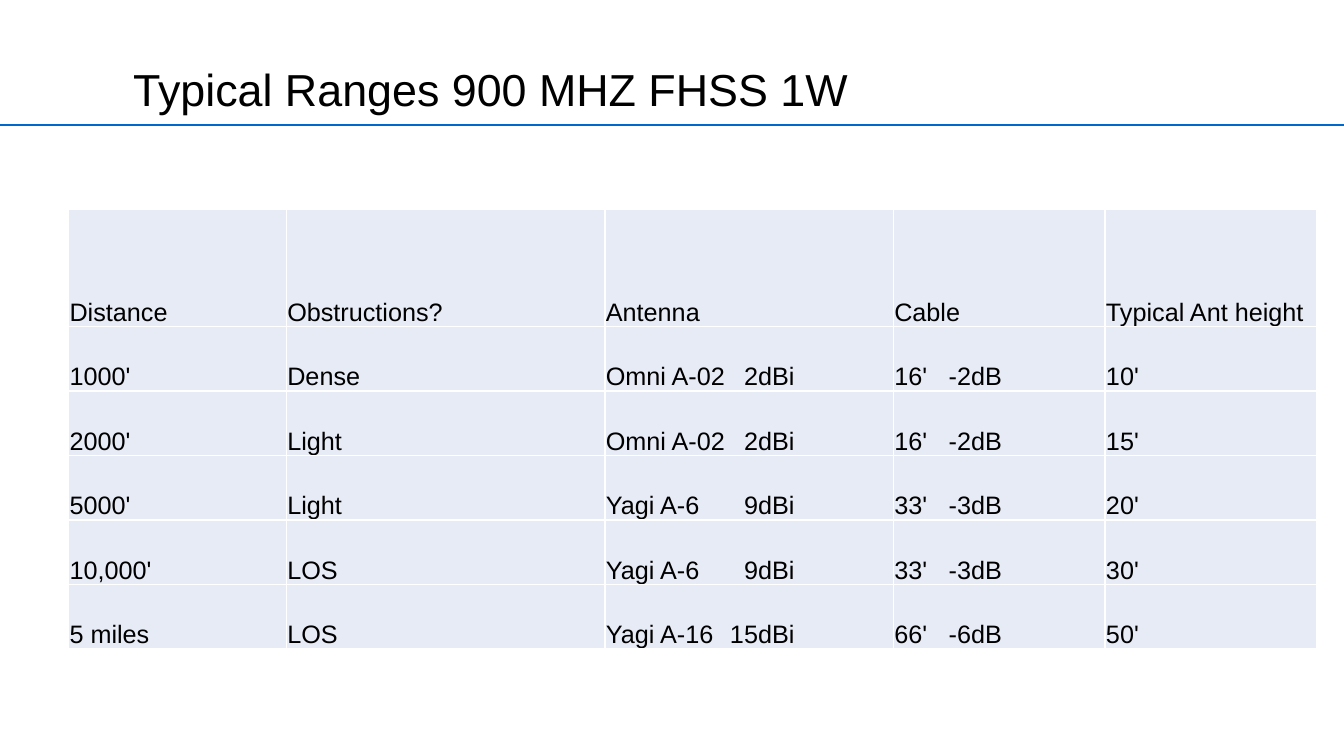
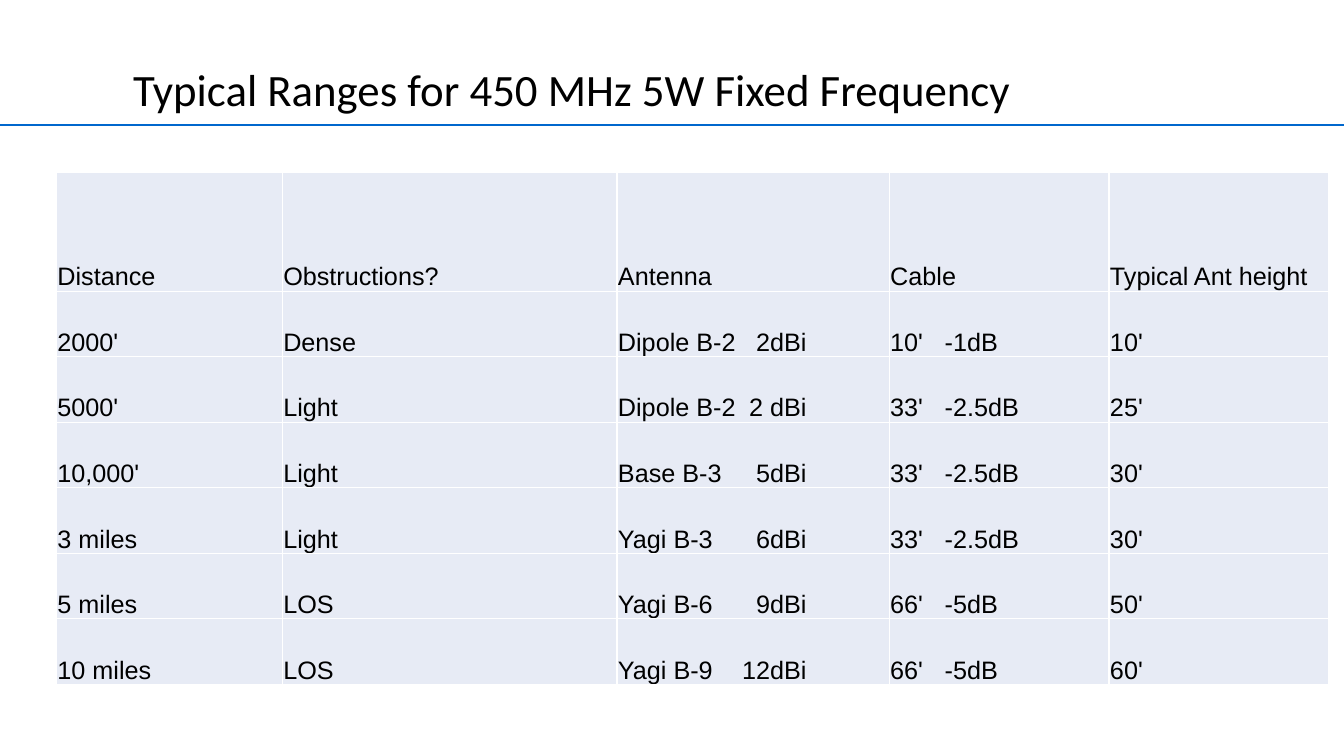
"""Build two slides of typical radio ranges, each with one table."""
from lxml import etree
from pptx import Presentation
from pptx.dml.color import RGBColor
from pptx.enum.shapes import MSO_CONNECTOR
from pptx.enum.text import MSO_ANCHOR, PP_ALIGN
from pptx.oxml.ns import qn
from pptx.util import Inches, Pt

STRAIGHT = MSO_CONNECTOR.STRAIGHT
BOTTOM = MSO_ANCHOR.BOTTOM
LEFT = PP_ALIGN.LEFT
COLORS = {"rule": "0067CD", "text": "000000", "cell": "E7EBF5", "border": "FFFFFF"}
CELL_FORMAT = {
    "margin_left": Inches(0.01), "margin_right": Inches(0.01),
    "margin_top": Inches(0.01), "margin_bottom": 0, "vertical_anchor": BOTTOM,
}
TITLE_PLACE = {
    "left": Inches(1.22), "top": 0, "width": Inches(11.56), "height": Inches(1.2),
}
TAB_STOPS = {2: (1.87, "r"), 3: (0.54, "l")}
HEADINGS = ["Distance", "Obstructions?", "Antenna", "Cable", "Typical Ant height"]
RANGE_SLIDES = [
    {
        "title": "Typical Ranges 900 MHZ FHSS 1W", "font": "Arial",
        "left": 0.68, "top": 2.08, "columns": [2.16, 3.16, 2.86, 2.1, 2.1],
        "header_height": 1.16, "row_height": 0.64,
        "rows": [
            ["1000'", "Dense", "Omni A-02\t2dBi", "16'\t-2dB", "10'"],
            ["2000'", "Light", "Omni A-02\t2dBi", "16'\t-2dB", "15'"],
            ["5000'", "Light", "Yagi A-6\t9dBi", "33'\t-3dB", "20'"],
            ["10,000'", "LOS", "Yagi A-6\t9dBi", "33'\t-3dB", "30'"],
            ["5 miles", "LOS", "Yagi A-16\t15dBi", "66'\t-6dB", "50'"],
        ],
    },
    {
        "title": "Typical Ranges for 450 MHz 5W Fixed Frequency", "font": "Calibri",
        "left": 0.56, "top": 1.71, "columns": [2.24, 3.32, 2.7, 2.18, 2.18],
        "header_height": 1.18, "row_height": 0.65,
        "rows": [
            ["2000'", "Dense", "Dipole B-2\t2dBi", "10'\t-1dB", "10'"],
            ["5000'", "Light", "Dipole B-2\t2 dBi", "33'\t-2.5dB", "25'"],
            ["10,000'", "Light", "Base B-3\t5dBi", "33'\t-2.5dB", "30'"],
            ["3 miles", "Light", "Yagi B-3\t6dBi", "33'\t-2.5dB", "30'"],
            ["5 miles", "LOS", "Yagi B-6\t9dBi", "66'\t-5dB", "50'"],
            ["10 miles", "LOS", "Yagi B-9\t12dBi", "66'\t-5dB", "60'"],
        ],
    },
]


def format_paragraph(paragraph, font_name, size, line_spacing):
    paragraph.alignment = LEFT
    paragraph.line_spacing = line_spacing
    font_format = {"name": font_name, "size": Pt(size), "bold": False}
    for name, value in font_format.items():
        setattr(paragraph.font, name, value)
    paragraph.font.color.rgb = RGBColor.from_string(COLORS["text"])


def add_borders(cell):
    properties = cell._tc.get_or_add_tcPr()
    for position, side in enumerate(("lnL", "lnR", "lnT", "lnB")):
        border = etree.Element(qn(f"a:{side}"), w=str(Pt(1)))
        fill = etree.SubElement(border, qn("a:solidFill"))
        etree.SubElement(fill, qn("a:srgbClr"), val=COLORS["border"])
        properties.insert(position, border)


presentation = Presentation()
presentation.slide_width = Inches(13.33)
presentation.slide_height = Inches(7.5)
layout = presentation.slide_layouts.get_by_name("Title Only")
for name, value in TITLE_PLACE.items():
    setattr(layout.placeholders[0], name, value)

slides = [presentation.slides.add_slide(layout) for _ in RANGE_SLIDES]
rule = slides[0].shapes.add_connector(
    STRAIGHT, 0, Inches(1.24), Inches(13.33), Inches(1.24))
rule.line.color.rgb = RGBColor.from_string(COLORS["rule"])
rule.line.width = Pt(1.5)
etree.SubElement(rule.element.spPr, qn("a:effectLst"))
rule.element.nvCxnSpPr.cNvPr.set("id", "20")
layout.shapes.element.append(rule.element)

for slide, content in zip(slides, RANGE_SLIDES):
    title = slide.shapes.title
    title.text_frame.text = content["title"]
    title.text_frame.vertical_anchor = BOTTOM
    format_paragraph(title.text_frame.paragraphs[0], content["font"], 32, 0.9)

    rows = [HEADINGS] + content["rows"]
    heights = [content["header_height"]] + [content["row_height"]] * len(content["rows"])
    table = slide.shapes.add_table(
        len(rows), len(HEADINGS), Inches(content["left"]), Inches(content["top"]),
        Inches(sum(content["columns"])), Inches(sum(heights))).table
    table.first_row = False
    table.horz_banding = False
    for column, width in zip(table.columns, content["columns"]):
        column.width = Inches(width)
    for row, height, texts in zip(table.rows, heights, rows):
        row.height = Inches(height)
        for index, (cell, text) in enumerate(zip(row.cells, texts)):
            cell.text = text
            for name, value in CELL_FORMAT.items():
                setattr(cell, name, value)
            cell.fill.solid()
            cell.fill.fore_color.rgb = RGBColor.from_string(COLORS["cell"])
            add_borders(cell)
            paragraph = cell.text_frame.paragraphs[0]
            if "\t" in text:
                stop, alignment = TAB_STOPS[index]
                tabs = etree.SubElement(paragraph._p.get_or_add_pPr(), qn("a:tabLst"))
                etree.SubElement(
                    tabs, qn("a:tab"), pos=str(Inches(stop)), algn=alignment)
            format_paragraph(paragraph, "Arial", 18, 1.1)

presentation.save("out.pptx")
